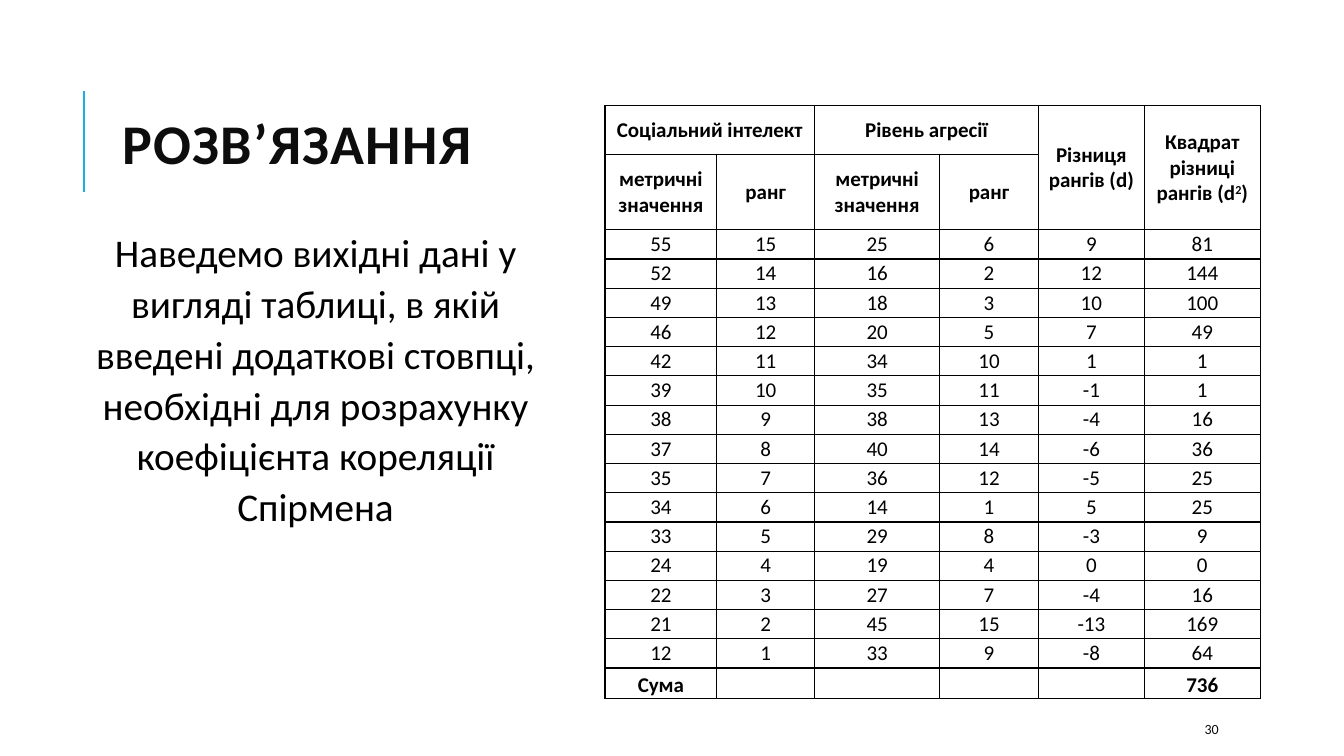
import dataclasses

import lxml.etree
import pptx
import pptx.dml.color
import pptx.enum.shapes
import pptx.enum.text
import pptx.oxml.ns
import pptx.util

EMU_PER_PX = 9144
ALIGN = pptx.enum.text.PP_ALIGN
ANCHOR = pptx.enum.text.MSO_ANCHOR


@dataclasses.dataclass(frozen=True)
class Theme:
    font: str = "Calibri"
    black: str = "000000"
    dark: str = "0D0D0D"
    accent: str = "1CADE4"
    title_size: int = 40
    body_size: int = 28
    table_size: int = 15
    number_size: int = 10


THEME = Theme()

COLUMN_WIDTHS = [111, 97, 124, 98, 105, 115]
ROW_HEIGHTS = [48, 59] + [29] * 16
HEADER_SPANS = [(0, 0, 0, 1), (0, 2, 0, 3), (0, 4, 1, 4), (0, 5, 1, 5)]
HEADERS = {
    (0, 0): ["Соціальний інтелект"],
    (0, 2): ["Рівень агресії"],
    (0, 4): ["Різниця", "рангів (d)"],
    (0, 5): ["Квадрат різниці", "рангів (d^2^)"],
    (1, 0): ["метричні значення"],
    (1, 1): ["ранг"],
    (1, 2): ["метричні значення"],
    (1, 3): ["ранг"],
}
INTELLECT = [55, 52, 49, 46, 42, 39, 38, 37, 35, 34, 33, 24, 22, 21, 12]
AGGRESSION = [25, 16, 18, 20, 34, 35, 38, 40, 36, 14, 29, 19, 27, 45, 33]


def px(length):
    return pptx.util.Emu(length * EMU_PER_PX)


def color(value):
    return pptx.dml.color.RGBColor.from_string(value)


def style_paragraph(paragraph, size, ink, bold=False, align=ALIGN.LEFT):
    paragraph.alignment = align
    paragraph.font.name = THEME.font
    paragraph.font.size = pptx.util.Pt(size)
    paragraph.font.bold = bold
    paragraph.font.color.rgb = color(ink)


def add_text(slide, box, text, size, ink, anchor=ANCHOR.MIDDLE, **style):
    shape = slide.shapes.add_textbox(*map(px, box))
    frame = shape.text_frame
    frame.word_wrap = True
    frame.vertical_anchor = anchor
    paragraph = frame.paragraphs[0]
    paragraph.text = text
    style_paragraph(paragraph, size, ink, **style)
    return paragraph


def add_accent_line(slide, x, top, bottom):
    line = slide.shapes.add_connector(
        pptx.enum.shapes.MSO_CONNECTOR.STRAIGHT, px(x), px(bottom), px(x), px(top)
    )
    line.line.color.rgb = color(THEME.accent)
    line.line.width = pptx.util.Pt(1.5)
    properties = line._element.spPr
    lxml.etree.SubElement(properties, pptx.oxml.ns.qn("a:effectLst"))


def add_borders(cell):
    properties = cell._tc.get_or_add_tcPr()
    for side in ("a:lnL", "a:lnR", "a:lnT", "a:lnB"):
        border = lxml.etree.SubElement(properties, pptx.oxml.ns.qn(side), w="12700")
        fill = lxml.etree.SubElement(border, pptx.oxml.ns.qn("a:solidFill"))
        lxml.etree.SubElement(fill, pptx.oxml.ns.qn("a:srgbClr"), val=THEME.black)


def fill_cell(cell, lines, bold, anchor):
    cell.margin_left = cell.margin_right = cell.margin_top = cell.margin_bottom = 0
    cell.vertical_anchor = anchor
    add_borders(cell)
    cell.fill.background()
    frame = cell.text_frame
    for index, line in enumerate(lines):
        paragraph = frame.add_paragraph() if index else frame.paragraphs[0]
        style_paragraph(paragraph, THEME.table_size, THEME.black, bold, ALIGN.CENTER)
        for position, part in enumerate(line.split("^")):
            run = paragraph.add_run()
            run.text = part
            if position % 2:
                run._r.get_or_add_rPr().set("baseline", "30000")


def rank_values(values):
    ordered = sorted(values)
    return [ordered.index(value) + 1 for value in values]


def correlation_rows():
    rows = []
    ranked = zip(INTELLECT, rank_values(INTELLECT), AGGRESSION, rank_values(AGGRESSION))
    for intellect, intellect_rank, aggression, aggression_rank in ranked:
        difference = intellect_rank - aggression_rank
        rows.append(
            [intellect, intellect_rank, aggression, aggression_rank, difference, difference**2]
        )
    return rows


def add_rank_table(slide, left, top):
    frame = slide.shapes.add_table(
        len(ROW_HEIGHTS), len(COLUMN_WIDTHS),
        px(left), px(top), px(sum(COLUMN_WIDTHS)), px(sum(ROW_HEIGHTS)),
    )
    table = frame.table
    table.first_row = False
    table.horz_banding = False
    for column, width in zip(table.columns, COLUMN_WIDTHS):
        column.width = px(width)
    for row, height in zip(table.rows, ROW_HEIGHTS):
        row.height = px(height)

    rows = correlation_rows()
    content = dict(HEADERS)
    for row_index, values in enumerate(rows, start=2):
        for column_index, value in enumerate(values):
            content[row_index, column_index] = [str(value)]
    total_row = len(rows) + 2
    content[total_row, 0] = ["Сума"]
    content[total_row, 5] = [str(sum(values[-1] for values in rows))]

    for row_index in range(len(ROW_HEIGHTS)):
        is_total = row_index == total_row
        for column_index in range(len(COLUMN_WIDTHS)):
            fill_cell(
                table.cell(row_index, column_index),
                content.get((row_index, column_index), []),
                bold=row_index < 2 or is_total,
                anchor=ANCHOR.BOTTOM if is_total else ANCHOR.MIDDLE,
            )
    for first_row, first_column, last_row, last_column in HEADER_SPANS:
        table.cell(first_row, first_column).merge(table.cell(last_row, last_column))


def main():
    presentation = pptx.Presentation()
    presentation.slide_width = px(1333)
    presentation.slide_height = px(750)
    slide = presentation.slides.add_slide(presentation.slide_layouts[6])

    add_accent_line(slide, 83, 90, 190)
    title = add_text(
        slide, (112, 52, 480, 190), "РОЗВ’ЯЗАННЯ", THEME.title_size, THEME.dark, bold=True
    )
    title.line_spacing = 0.8
    title._p.pPr.find(pptx.oxml.ns.qn("a:defRPr")).set("spc", "100")
    body = add_text(
        slide, (73, 218, 480, 411),
        "Наведемо вихідні дані у вигляді таблиці, в якій введені додаткові стовпці, "
        "необхідні для розрахунку коефіцієнта кореляції Спірмена",
        THEME.body_size, THEME.black, anchor=ANCHOR.TOP, align=ALIGN.CENTER,
    )
    body.line_spacing = 1.08
    body.space_after = pptx.util.Pt(2)
    add_rank_table(slide, 600, 105)
    add_text(slide, (1185, 708, 106, 30), "30", THEME.number_size, THEME.dark)
    presentation.save("out.pptx")


if __name__ == "__main__":
    main()
